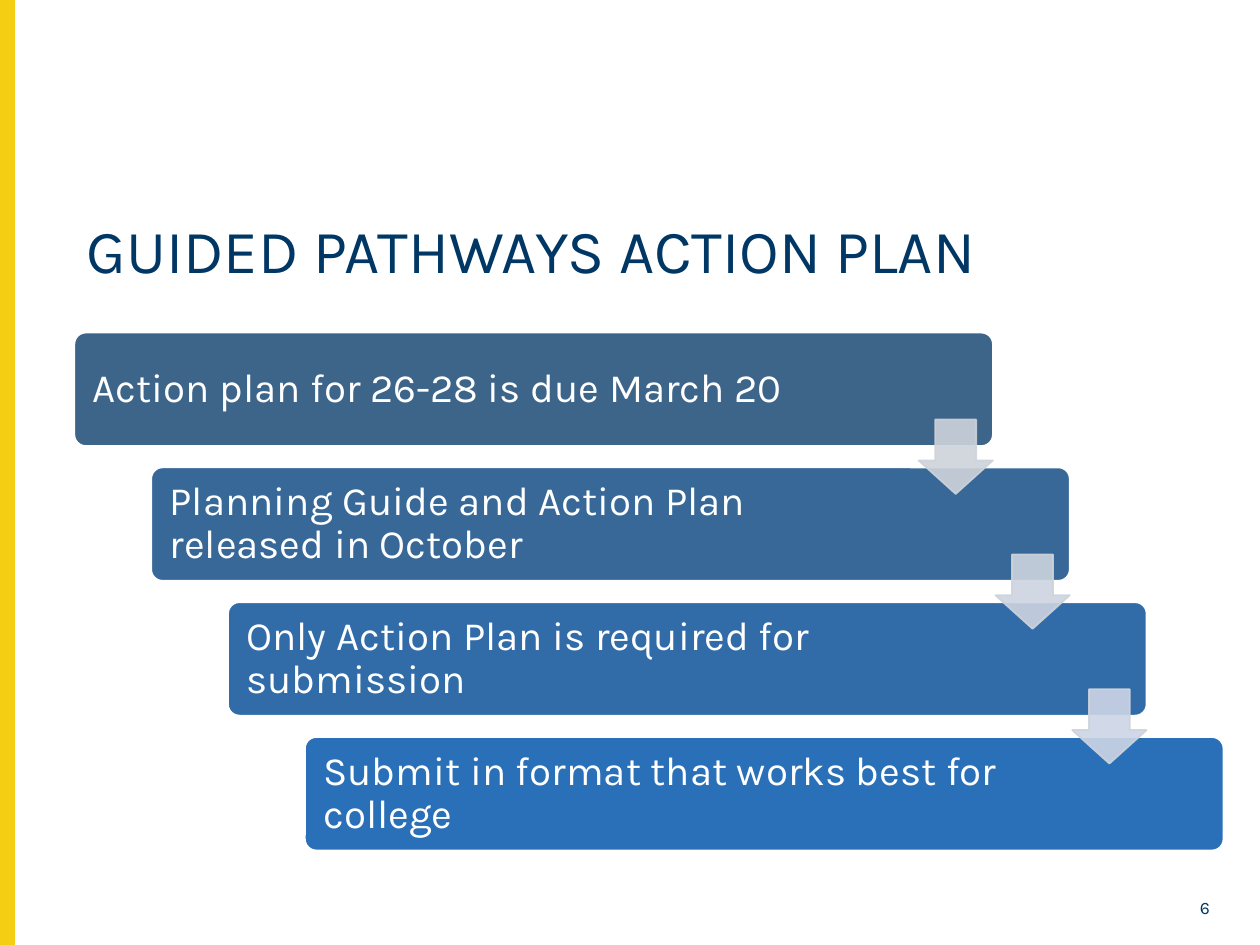
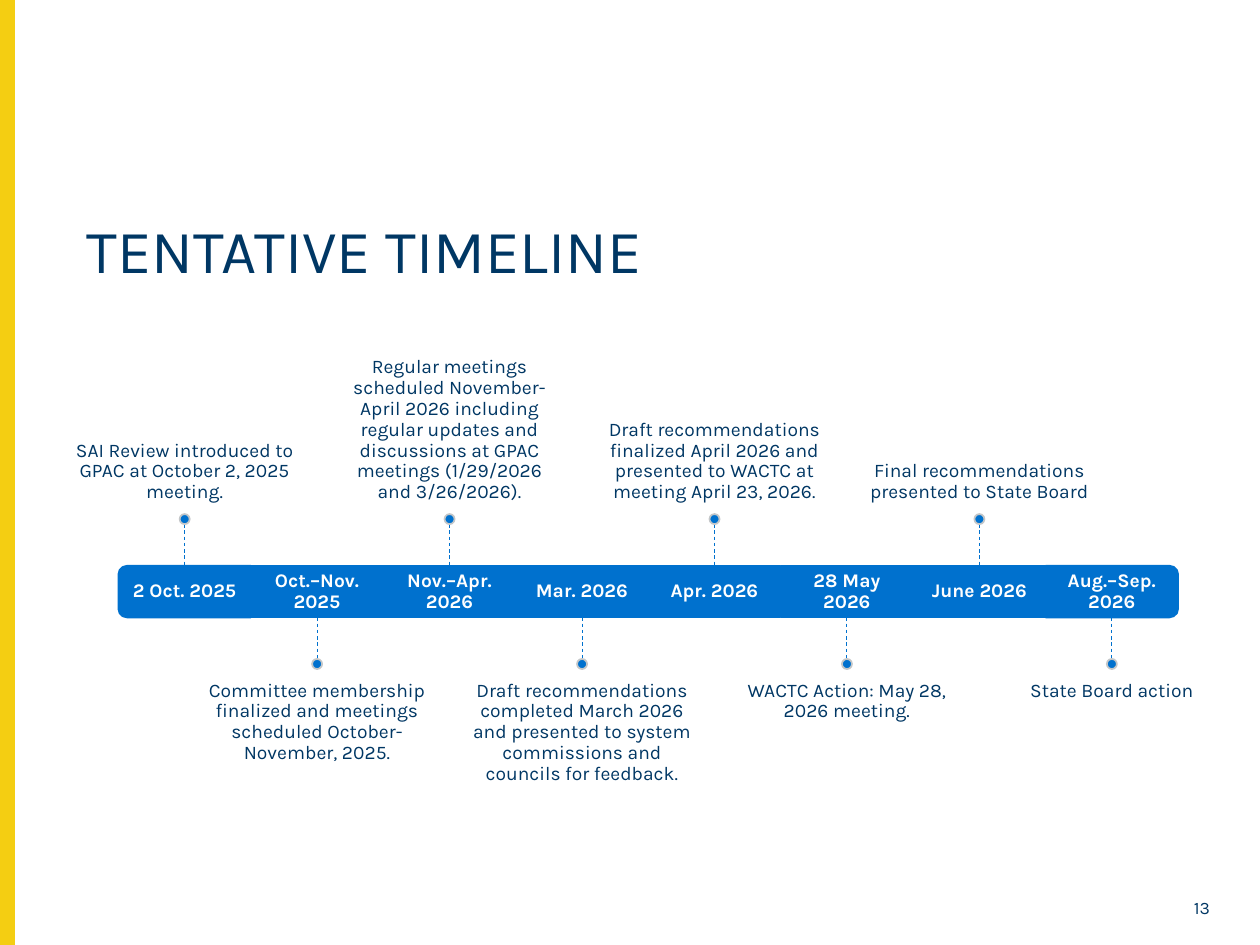
"""Build two slides: the Guided Pathways action plan and its tentative timeline."""
from lxml.etree import SubElement
from pptx import Presentation
from pptx.dml.color import RGBColor
from pptx.enum.dml import MSO_LINE
from pptx.enum.shapes import MSO_CONNECTOR, MSO_SHAPE
from pptx.enum.text import MSO_ANCHOR, PP_ALIGN
from pptx.oxml.ns import qn
from pptx.util import Inches, Pt

FONT = "Karla"
NAVY = RGBColor(0x00, 0x37, 0x64)
YELLOW = RGBColor(0xF4, 0xCE, 0x12)
WHITE = RGBColor(0xFF, 0xFF, 0xFF)
BLUE = RGBColor(0x00, 0x71, 0xCE)
DOT_GRAY = RGBColor(0xC3, 0xC6, 0xC8)
ARROW_GRAY = RGBColor(0xCE, 0xD3, 0xDA)
STEP_COLORS = [
    RGBColor(0x3D, 0x64, 0x89),
    RGBColor(0x37, 0x68, 0x98),
    RGBColor(0x31, 0x6C, 0xA8),
    RGBColor(0x2A, 0x70, 0xB8),
]
ARROW_COLORS = [ARROW_GRAY, RGBColor(0xCD, 0xD4, 0xE0), RGBColor(0xCD, 0xD5, 0xE6)]


def add_block(page, kind, left, top, width, height, fill, line):
    block = page.shapes.add_shape(kind, Inches(left), Inches(top), Inches(width), Inches(height))
    block.shadow.inherit = False
    block.fill.solid()
    block.fill.fore_color.rgb = fill
    block.line.color.rgb = line
    block.line.width = Pt(1)
    return block


def write_text(box, text, size, color=NAVY, align=PP_ALIGN.LEFT, anchor=MSO_ANCHOR.TOP,
               margins=(0.1, 0.05, 0.1, 0.05), bold=False):
    frame = box.text_frame
    frame.word_wrap = True
    frame.vertical_anchor = anchor
    frame.margin_left, frame.margin_top, frame.margin_right, frame.margin_bottom = map(Inches, margins)
    paragraph = frame.paragraphs[0]
    paragraph.text = text
    paragraph.alignment = align
    paragraph.line_spacing = 0.9
    paragraph.font.name = FONT
    paragraph.font.size = Pt(size)
    paragraph.font.bold = bold
    paragraph.font.color.rgb = color


deck = Presentation()
deck.slide_width = Inches(10)
deck.slide_height = Inches(7.5)

pages = []
for title, number in [("GUIDED PATHWAYS ACTION PLAN", "6"), ("TENTATIVE TIMELINE", "13")]:
    page = deck.slides.add_slide(deck.slide_layouts[6])
    add_block(page, MSO_SHAPE.RECTANGLE, 0, 0, 0.11, 7.5, YELLOW, YELLOW)
    title_box = page.shapes.add_textbox(Inches(0.59), Inches(1.7), Inches(9.12), Inches(0.87))
    write_text(title_box, title, 35)
    number_box = page.shapes.add_textbox(Inches(9.19), Inches(7.09), Inches(0.51), Inches(0.26))
    write_text(number_box, number, 10, align=PP_ALIGN.RIGHT)
    pages.append(page)
plan_page, timeline_page = pages

STEPS = [
    "Action plan for 26-28 is due March 20",
    "Planning Guide and Action Plan released in October",
    "Only Action Plan is required for submission",
    "Submit in format that works best for college",
]
STEP_RIGHT, STEP_DOWN = 0.61, 1.07

for index, (step, color) in enumerate(zip(STEPS, STEP_COLORS)):
    bar = add_block(plan_page, MSO_SHAPE.ROUNDED_RECTANGLE, 0.59 + index * STEP_RIGHT,
                    2.64 + index * STEP_DOWN, 7.29, 0.9, color, WHITE)
    bar.adjustments[0] = 0.1
    write_text(bar, step, 23, WHITE, anchor=MSO_ANCHOR.MIDDLE, margins=(0.12, 0.1, 1.33, 0.1))

for index, color in enumerate(ARROW_COLORS):
    arrow = add_block(plan_page, MSO_SHAPE.DOWN_ARROW, 7.29 + index * STEP_RIGHT,
                      3.33 + index * STEP_DOWN, 0.59, 0.59, color, ARROW_GRAY)
    arrow.adjustments[0] = 0.55
    arrow.adjustments[1] = 0.45
    for color_element in arrow._element.spPr.iter(qn("a:srgbClr")):
        SubElement(color_element, qn("a:alpha"), val="90000")

EVENTS = [
    ("2 Oct. 2025", "SAI Review introduced to GPAC at October 2, 2025 meeting."),
    ("Oct.–Nov. 2025", "Committee membership finalized and meetings scheduled October-November, 2025."),
    ("Nov.–Apr. 2026", "Regular meetings scheduled November-April 2026 including regular updates and "
                       "discussions at GPAC meetings (1/29/2026 and 3/26/2026)."),
    ("Mar. 2026", "Draft recommendations completed March 2026 and presented to system commissions "
                  "and councils for feedback."),
    ("Apr. 2026", "Draft recommendations finalized April 2026 and presented to WACTC at meeting "
                  "April 23, 2026."),
    ("28 May 2026", "WACTC Action: May 28, 2026 meeting."),
    ("June 2026", "Final recommendations presented to State Board"),
    ("Aug.–Sep. 2026", "State Board action"),
]
BAND_LEFT, BAND_TOP, BAND_HEIGHT = 0.94, 4.49, 0.41
SEGMENT = 8.41 / len(EVENTS)
LABEL_WIDTH, LABEL_HEIGHT = 1.75, 1.44
DOT = 0.08
STEM = 0.33
END_ROTATIONS = {0: 270, len(EVENTS) - 1: 90}

for index, (date, event) in enumerate(EVENTS):
    left = BAND_LEFT + index * SEGMENT
    center = left + SEGMENT / 2
    if index in END_ROTATIONS:
        cap = add_block(timeline_page, MSO_SHAPE.ROUND_2_SAME_RECTANGLE, center - BAND_HEIGHT / 2,
                        BAND_TOP + BAND_HEIGHT / 2 - SEGMENT / 2, BAND_HEIGHT, SEGMENT, BLUE, BLUE)
        cap.rotation = END_ROTATIONS[index]
        date_box = timeline_page.shapes.add_textbox(
            Inches(left), Inches(BAND_TOP), Inches(SEGMENT), Inches(BAND_HEIGHT))
    else:
        date_box = add_block(timeline_page, MSO_SHAPE.RECTANGLE, left, BAND_TOP,
                             SEGMENT, BAND_HEIGHT, BLUE, BLUE)
    write_text(date_box, date, 11, WHITE, PP_ALIGN.CENTER, MSO_ANCHOR.MIDDLE, (0.09,) * 4, bold=True)

    if index % 2 == 0:
        stem_start, stem_end = BAND_TOP - STEM, BAND_TOP
        dot_top = stem_start - DOT
        label_top = dot_top - LABEL_HEIGHT
        anchor, margins = MSO_ANCHOR.BOTTOM, (0, 0, 0, 0.09)
    else:
        stem_start = BAND_TOP + BAND_HEIGHT
        stem_end = dot_top = stem_start + STEM
        label_top = dot_top + DOT
        anchor, margins = MSO_ANCHOR.TOP, (0, 0.09, 0, 0)

    label = timeline_page.shapes.add_textbox(Inches(center - LABEL_WIDTH / 2), Inches(label_top),
                                             Inches(LABEL_WIDTH), Inches(LABEL_HEIGHT))
    write_text(label, event, 11, align=PP_ALIGN.CENTER, anchor=anchor, margins=margins)
    stem = timeline_page.shapes.add_connector(
        MSO_CONNECTOR.STRAIGHT, Inches(center), Inches(stem_start), Inches(center), Inches(stem_end))
    stem.line.color.rgb = BLUE
    stem.line.width = Pt(0.5)
    stem.line.dash_style = MSO_LINE.DASH
    SubElement(stem._element.spPr, qn("a:effectLst"))
    add_block(timeline_page, MSO_SHAPE.OVAL, center - DOT / 2, dot_top, DOT, DOT, BLUE, DOT_GRAY)

deck.save("out.pptx")
